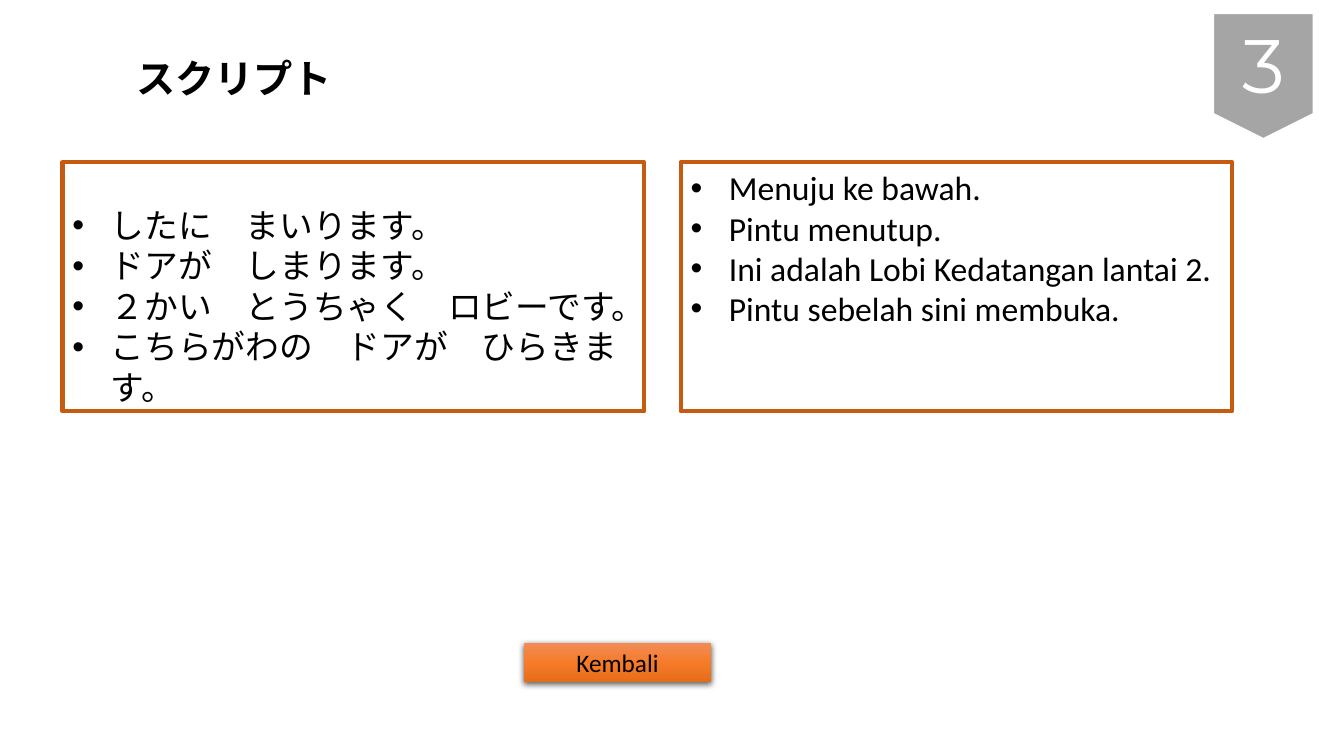
from dataclasses import dataclass
from lxml.etree import SubElement
from pptx import Presentation
from pptx.dml.color import RGBColor
from pptx.enum.shapes import MSO_SHAPE as Shape
from pptx.enum.text import MSO_ANCHOR as Anchor, PP_ALIGN as Align
from pptx.oxml import parse_xml
from pptx.oxml.ns import nsdecls, qn
from pptx.util import Inches, Pt

BLACK = RGBColor(0x00, 0x00, 0x00)
WHITE = RGBColor(0xFF, 0xFF, 0xFF)
GREY = RGBColor(0xA5, 0xA5, 0xA5)
RUST = RGBColor(0xC5, 0x5A, 0x11)
BUTTON_STOPS = [
    (0, RGBColor(0xF1, 0x8C, 0x57)),
    (50, RGBColor(0xF6, 0x7B, 0x28)),
    (100, RGBColor(0xE5, 0x6C, 0x19)),
]

SLIDE_WIDTH = Inches(13.33)
SLIDE_HEIGHT = Inches(7.5)
PANEL_TOP, PANEL_HEIGHT = 21.47, 32.93
INDENT = Inches(0.38)

JAPANESE_LINES = [
    "したに　まいります。",
    "ドアが　しまります。",
    "２かい　とうちゃく　ロビーです。",
    "こちらがわの　ドアが　ひらきます。",
]
INDONESIAN_LINES = [
    "Menuju ke bawah.",
    "Pintu menutup.",
    "Ini adalah Lobi Kedatangan lantai 2.",
    "Pintu sebelah sini membuka.",
]


@dataclass
class Box:
    """Position and size in percent of the slide."""
    left: float
    top: float
    width: float
    height: float

    def lengths(self):
        return (
            int(SLIDE_WIDTH * self.left / 100),
            int(SLIDE_HEIGHT * self.top / 100),
            int(SLIDE_WIDTH * self.width / 100),
            int(SLIDE_HEIGHT * self.height / 100),
        )


def add_span(para, text, size, font="Calibri", color=BLACK, bold=False):
    span = para.add_run()
    span.text = text
    span.font.name = font
    span.font.size = Pt(size)
    span.font.bold = bold
    span.font.color.rgb = color


def add_block(page, kind, box):
    block = page.shapes.add_shape(kind, *box.lengths())
    block.shadow.inherit = False
    block.text_frame.word_wrap = True
    return block


def add_bullet(para):
    props = para._p.get_or_add_pPr()
    props.set("marL", str(INDENT))
    props.set("indent", str(-INDENT))
    SubElement(props, qn("a:buFont"), typeface="Arial")
    SubElement(props, qn("a:buChar"), char="•")


def add_title(page, box):
    title = page.shapes.title
    title.left, title.top, title.width, title.height = box.lengths()
    frame = title.text_frame
    frame.word_wrap = True
    frame.vertical_anchor = Anchor.TOP
    para = frame.paragraphs[0]
    para.alignment = Align.LEFT
    add_span(para, "スクリプト", 28, bold=True)


def add_panel(page, box, lines, size, font, inset):
    panel = add_block(page, Shape.RECTANGLE, box)
    panel.fill.background()
    panel.line.color.rgb = RUST
    panel.line.width = Pt(3)
    frame = panel.text_frame
    frame.vertical_anchor = Anchor.TOP
    frame.margin_top = Inches(inset)
    for index, line in enumerate(lines):
        para = frame.add_paragraph() if index else frame.paragraphs[0]
        para.alignment = Align.LEFT
        add_bullet(para)
        add_span(para, line, size, font)


def add_button(page, box):
    button = add_block(page, Shape.RECTANGLE, box)
    button.line.fill.background()
    stops = "".join(
        f'<a:gs pos="{share * 1000}"><a:srgbClr val="{color}"/></a:gs>'
        for share, color in BUTTON_STOPS
    )
    gradient = parse_xml(
        f'<a:gradFill {nsdecls("a")} rotWithShape="1"><a:gsLst>{stops}</a:gsLst>'
        '<a:lin ang="5400000" scaled="0"/></a:gradFill>'
    )
    props = button._element.spPr
    props.find(qn("a:prstGeom")).addnext(gradient)
    props.find(qn("a:effectLst")).append(parse_xml(
        f'<a:outerShdw {nsdecls("a")} blurRad="{Pt(4.5)}" dist="{Pt(1.5)}" '
        'dir="5400000" algn="ctr" rotWithShape="0"><a:srgbClr val="000000">'
        '<a:alpha val="63000"/></a:srgbClr></a:outerShdw>'
    ))
    button.text_frame.vertical_anchor = Anchor.MIDDLE
    para = button.text_frame.paragraphs[0]
    para.alignment = Align.CENTER
    add_span(para, "Kembali", 18)


def add_number(page, box):
    badge = add_block(page, Shape.FLOWCHART_OFFPAGE_CONNECTOR, box)
    badge.fill.solid()
    badge.fill.fore_color.rgb = GREY
    badge.line.color.rgb = WHITE
    badge.line.width = Pt(1.5)
    badge.text_frame.vertical_anchor = Anchor.TOP
    para = badge.text_frame.paragraphs[0]
    para.alignment = Align.CENTER
    add_span(para, "3", 54, "Montserrat", WHITE)


def build_script_page(deck):
    page = deck.slides.add_slide(deck.slide_layouts[5])
    add_title(page, Box(9.38, 6.53, 26.11, 7.6))
    add_panel(page, Box(50.64, PANEL_TOP, 41.04, PANEL_HEIGHT),
              INDONESIAN_LINES, 24, "Calibri", 0.05)
    add_panel(page, Box(4.65, PANEL_TOP, 43.29, PANEL_HEIGHT),
              JAPANESE_LINES, 24.1, "Arial", 0.42)
    add_button(page, Box(39.01, 85.07, 13.88, 5.2))
    add_number(page, Box(90.25, 1.73, 7.5, 16.67))


def main():
    deck = Presentation()
    deck.slide_width = SLIDE_WIDTH
    deck.slide_height = SLIDE_HEIGHT
    build_script_page(deck)
    deck.save("out.pptx")


if __name__ == "__main__":
    main()
